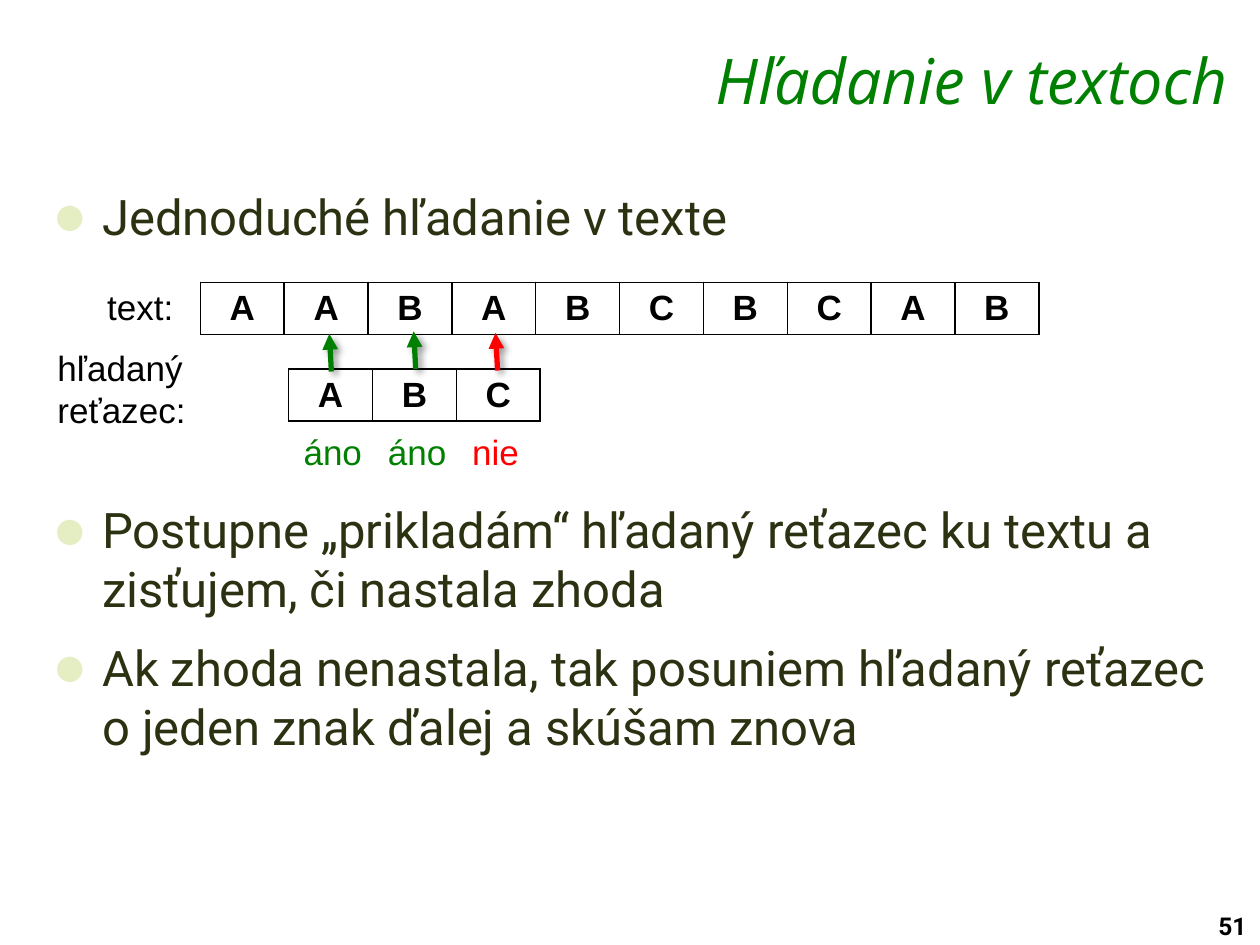
"""Builds the slide on simple string search in a text."""
from dataclasses import dataclass
from lxml import etree
from pptx import Presentation
from pptx.dml.color import RGBColor as RGB
from pptx.enum.shapes import MSO_CONNECTOR as Link
from pptx.enum.text import MSO_ANCHOR as Anchor, PP_ALIGN as Align
from pptx.oxml import parse_xml
from pptx.oxml.ns import nsdecls, qn
from pptx.util import Cm, Pt


@dataclass(frozen=True)
class Theme:
    black: str = "000000"
    white: str = "FFFFFF"
    green: str = "008000"
    red: str = "FF0000"
    olive: str = "2B3212"
    dot: str = "E5EEC2"
    head: str = "Open Sans"
    main: str = "Roboto"
    plain: str = "Arial"
    title: int = 36
    body: int = 28
    label: int = 20
    page: int = 14


theme = Theme()
NS = nsdecls("a")


def style(par, face, size, color, bold=False, italic=False):
    for run in par.runs:
        font = run.font
        font.name, font.size = face, Pt(size)
        font.bold, font.italic = bold, italic
        font.color.rgb = RGB.from_string(color)


def write(text, left, top, width, height, look, wrap=True):
    box = slide.shapes.add_textbox(Cm(left), Cm(top), Cm(width), Cm(height))
    frame = box.text_frame
    frame.word_wrap = wrap
    frame.text = text
    for par in frame.paragraphs:
        style(par, *look)
    return frame


deck = Presentation()
deck.slide_width, deck.slide_height = Cm(25.4), Cm(19.05)
slide = deck.slides.add_slide(deck.slide_layouts[6])

write("51", 24.31, 18.24, 1.3, 0.84, (theme.main, theme.page, theme.black, True), False)
title = write("Hľadanie v textoch", 5.82, 0.72, 19.18, 1.47,
              (theme.head, theme.title, theme.green, False, True))
title.paragraphs[0].alignment = Align.RIGHT

points = [
    "Jednoduché hľadanie v texte",
    "Postupne „prikladám“ hľadaný reťazec ku textu a zisťujem, či nastala zhoda",
    "Ak zhoda nenastala, tak posuniem hľadaný reťazec o jeden znak ďalej a skúšam znova",
]
body = write("\n".join(points), 0.81, 3.63, 23.83, 14.6,
             (theme.main, theme.body, theme.olive))
for par, gap in zip(body.paragraphs, (0, 140, 5.6)):
    par.space_before, par.space_after = Pt(gap), Pt(5.6)
    props = par._p.get_or_add_pPr()
    props.set("marL", str(Cm(1)))
    props.set("indent", str(-Cm(1)))
    for xml in (f'<a:buClr {NS}><a:srgbClr val="{theme.dot}"/></a:buClr>',
                f'<a:buSzPct {NS} val="120000"/>',
                f'<a:buFont {NS} typeface="{theme.plain}"/>',
                f'<a:buChar {NS} char="●"/>'):
        props.append(parse_xml(xml))

step, high = 1.69, 1.05
for word, left, top in (("AABABCBCAB", 4.04, 5.69), ("ABC", 5.82, 7.44)):
    size = len(word)
    grid = slide.shapes.add_table(1, size, Cm(left), Cm(top), Cm(step * size), Cm(high)).table
    grid.first_row = grid.horz_banding = False
    grid.rows[0].height = Cm(high)
    for col, sign in enumerate(word):
        grid.columns[col].width = Cm(step)
        cell = grid.cell(0, col)
        cell.margin_top = cell.margin_bottom = Cm(0)
        cell.vertical_anchor = Anchor.MIDDLE
        cell.text_frame.text = sign
        par = cell.text_frame.paragraphs[0]
        par.alignment = Align.CENTER
        style(par, theme.plain, theme.label, theme.black, True)
        props = cell._tc.get_or_add_tcPr()
        for side in ("lnL", "lnR", "lnT", "lnB"):
            props.append(parse_xml(
                f'<a:{side} {NS} w="{Pt(1)}"><a:solidFill>'
                f'<a:srgbClr val="{theme.black}"/></a:solidFill></a:{side}>'))
        cell.fill.solid()
        cell.fill.fore_color.rgb = RGB.from_string(theme.white)

for text, left, top, width, height, color in (
        ("text:", 1.91, 5.64, 1.85, 1.12, theme.black),
        ("hľadaný\nreťazec:", 0.91, 6.86, 3.18, 1.96, theme.black),
        ("áno", 5.87, 8.56, 1.7, 1.12, theme.green),
        ("áno", 7.57, 8.56, 1.7, 1.12, theme.green),
        ("nie", 9.27, 8.56, 1.47, 1.12, theme.red)):
    write(text, left, top, width, height, (theme.plain, theme.label, color), False)

for left, low, color in ((6.68, 7.49, theme.green), (8.38, 7.44, theme.green),
                         (10.03, 7.47, theme.red)):
    arrow = slide.shapes.add_connector(
        Link.STRAIGHT, Cm(left), Cm(low), Cm(left - 0.04), Cm(low - 0.76))
    arrow.line.width = Pt(3)
    arrow.line.color.rgb = RGB.from_string(color)
    etree.SubElement(arrow.line._get_or_add_ln(), qn("a:tailEnd"), type="triangle")
    arrow._element.spPr.append(parse_xml(
        f'<a:effectLst {NS}><a:outerShdw blurRad="{Pt(4)}" dist="{Pt(3)}" dir="2700000">'
        f'<a:srgbClr val="{theme.black}"><a:alpha val="40000"/></a:srgbClr>'
        '</a:outerShdw></a:effectLst>'))

deck.save("out.pptx")
